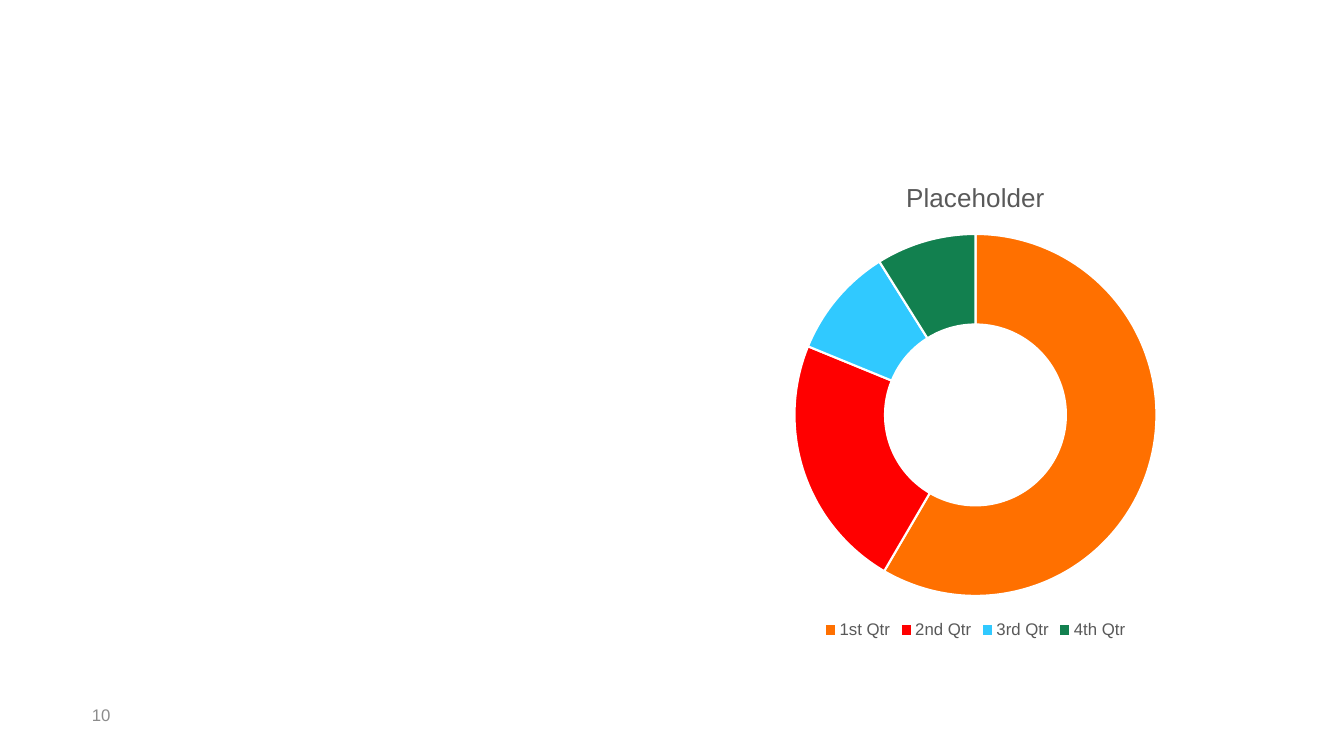
import pptx
import pptx.chart.data
import pptx.dml.color
import pptx.enum.chart
import pptx.enum.text
import pptx.util

PX = 914400 / 100.8
COLORS = {
    "1st Qtr": "FF7000",
    "2nd Qtr": "FF0000",
    "3rd Qtr": "30C9FF",
    "4th Qtr": "12804F",
    "gap": "FFFFFF",
    "label": "595959",
    "number": "8C8C8C",
}
QUARTERS = {"1st Qtr": 59, "2nd Qtr": 23, "3rd Qtr": 10, "4th Qtr": 9}


def px(*lengths):
    return [pptx.util.Emu(round(n * PX)) for n in lengths]


def style(font, size, color):
    values = {"name": "Arial", "size": pptx.util.Pt(size), "bold": False}
    for name, value in values.items():
        setattr(font, name, value)
    font.color.rgb = pptx.dml.color.RGBColor.from_string(COLORS[color])


prs = pptx.Presentation()
prs.slide_width, prs.slide_height = px(1344, 756)
s = prs.slides.add_slide(prs.slide_layouts[6])

data = pptx.chart.data.CategoryChartData()
data.categories = list(QUARTERS)
data.add_series("Series 1", list(QUARTERS.values()))
chart = s.shapes.add_chart(
    pptx.enum.chart.XL_CHART_TYPE.DOUGHNUT, *px(693, 160, 565, 483), data
).chart
style(chart.font, 10, "label")

chart.has_title = True
tf = chart.chart_title.text_frame
tf.text = "Placeholder"
style(tf.paragraphs[0].runs[0].font, 18.6, "label")
chart.chart_title.include_in_layout = False

chart.has_legend = True
legend = chart.legend
legend.position = pptx.enum.chart.XL_LEGEND_POSITION.BOTTOM
legend.include_in_layout = False
style(legend.font, 12, "label")

plot = chart.plots[0]
plot.vary_by_categories = True
for hole in plot._element.xpath("c:holeSize"):
    hole.set("val", "59")
for i, quarter in enumerate(QUARTERS):
    fmt = plot.series[0].points[i].format
    fmt.fill.solid()
    fmt.fill.fore_color.rgb = pptx.dml.color.RGBColor.from_string(COLORS[quarter])
    fmt.line.color.rgb = pptx.dml.color.RGBColor.from_string(COLORS["gap"])
    fmt.line.width = pptx.util.Pt(1.5)

tf = s.shapes.add_textbox(*px(82, 695, 269, 40)).text_frame
tf.word_wrap = True
tf.vertical_anchor = pptx.enum.text.MSO_ANCHOR.MIDDLE
r = tf.paragraphs[0].add_run()
r.text = "10"
style(r.font, 12, "number")

prs.save("out.pptx")
